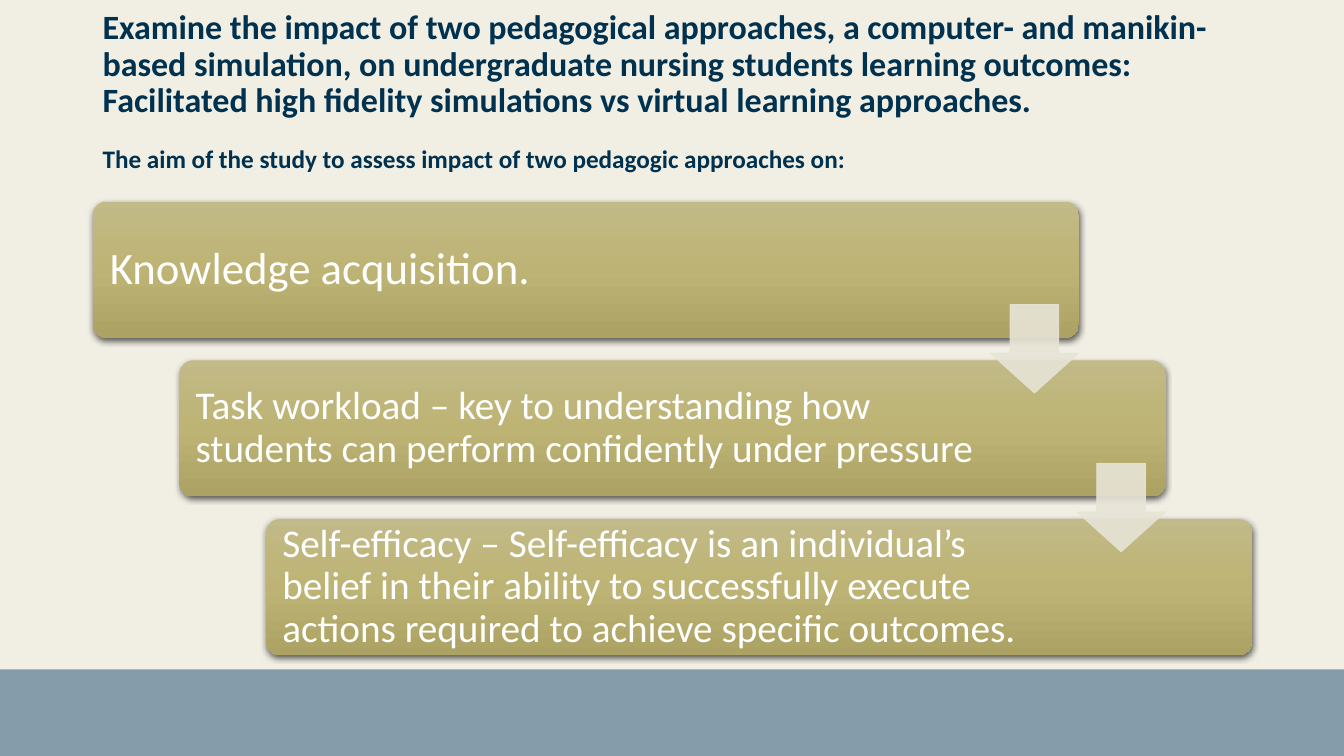
from copy import deepcopy

from lxml import etree
from pptx import Presentation
from pptx.dml.color import RGBColor
from pptx.enum.shapes import MSO_SHAPE
from pptx.enum.text import MSO_ANCHOR, PP_ALIGN
from pptx.oxml import parse_xml
from pptx.oxml.ns import nsdecls, qn
from pptx.util import Inches, Pt

RECTANGLE = MSO_SHAPE.RECTANGLE
ROUNDED = MSO_SHAPE.ROUNDED_RECTANGLE
DOWN_ARROW = MSO_SHAPE.DOWN_ARROW
TOP, MIDDLE = MSO_ANCHOR.TOP, MSO_ANCHOR.MIDDLE
LEFT = PP_ALIGN.LEFT

COLORS = {
    "background": "F1EFE4",
    "footer": "859DAA",
    "title": "00314F",
    "card_top": "C2BA87",
    "card_middle": "BDB374",
    "card_bottom": "ACA263",
    "arrow": "E7E4D6",
    "card_text": "FFFFFF",
    "shadow": "000000",
}
FONT = "Calibri"

TITLE = [
    ("Examine the impact of two pedagogical approaches, a computer- and manikin-based "
     "simulation, on undergraduate nursing students learning outcomes: Facilitated high "
     "fidelity simulations vs virtual learning approaches.", 24.3, 0),
    ("The aim of the study to assess impact of two pedagogic approaches on:", 18, 19),
]
OUTCOMES = [
    ("Knowledge acquisition.", 32, 8.32, 0.13),
    ("Task workload – key to understanding how students can perform confidently "
     "under pressure", 28, 7.96, 0.12),
    ("Self-efficacy – Self-efficacy is an individual’s belief in their ability to "
     "successfully execute actions required to achieve specific outcomes.", 28, 7.96, 0.12),
]
CARD_WIDTH, CARD_HEIGHT = 9.78, 1.35
ARROW_SIZE = 0.88


def color(name):
    return RGBColor.from_string(COLORS[name])


def add_box(slide, kind, left, top, width, height):
    shape = slide.shapes.add_shape(
        kind, Inches(left), Inches(top), Inches(width), Inches(height))
    shape.shadow.inherit = False
    shape.line.fill.background()
    return shape


def add_text(slide, left, top, width, height, paragraphs, color_name,
             anchor=MIDDLE, inset=0.1, bold=False):
    box = slide.shapes.add_textbox(
        Inches(left), Inches(top), Inches(width), Inches(height))
    frame = box.text_frame
    frame.word_wrap = True
    frame.vertical_anchor = anchor
    frame.margin_left = frame.margin_right = Inches(inset)
    frame.margin_top = frame.margin_bottom = Inches(inset)
    for index, (text, size, space_before) in enumerate(paragraphs):
        paragraph = frame.add_paragraph() if index else frame.paragraphs[0]
        paragraph.alignment = LEFT
        paragraph.line_spacing = 0.9
        if space_before:
            paragraph.space_before = Pt(space_before)
        run = paragraph.add_run()
        run.text = text
        run.font.name = FONT
        run.font.size = Pt(size)
        run.font.bold = bold
        run.font.color.rgb = color(color_name)


def fill_card(shape):
    fill = shape.fill
    fill.gradient()
    stop_list = shape.element.spPr.find(".//" + qn("a:gsLst"))
    stop_list.append(deepcopy(stop_list[0]))
    names = ("card_top", "card_middle", "card_bottom")
    for index, (stop, name) in enumerate(zip(fill.gradient_stops, names)):
        stop.position = index / 2
        stop.color.rgb = color(name)
    fill.gradient_angle = 270


def add_card_shadow(shape):
    effects = shape.element.spPr.find(qn("a:effectLst"))
    effects.append(parse_xml(
        f'<a:outerShdw {nsdecls("a")} blurRad="{Pt(4.5)}" dist="{Pt(1.5)}" '
        f'dir="5400000" rotWithShape="0"><a:srgbClr val="{COLORS["shadow"]}">'
        '<a:alpha val="63000"/></a:srgbClr></a:outerShdw>'))


def add_card(slide, left, top, outcome):
    text, size, text_width, inset = outcome
    card = add_box(slide, ROUNDED, left, top, CARD_WIDTH, CARD_HEIGHT)
    card.adjustments[0] = 0.1
    fill_card(card)
    add_card_shadow(card)
    add_text(slide, left + 0.04, top + 0.04, text_width, CARD_HEIGHT - 0.08,
             [(text, size, 0)], "card_text", inset=inset)


def add_arrow(slide, left, top):
    arrow = add_box(slide, DOWN_ARROW, left, top, ARROW_SIZE, ARROW_SIZE)
    arrow.adjustments[0] = 0.55
    arrow.adjustments[1] = 0.45
    arrow.fill.solid()
    arrow.fill.fore_color.rgb = color("arrow")
    arrow.line.color.rgb = color("arrow")
    arrow.line.width = Pt(0.5)
    for value in arrow.element.spPr.iter(qn("a:srgbClr")):
        etree.SubElement(value, qn("a:alpha")).set("val", "90000")


def add_staircase(slide, left, top, width, height):
    intervals = len(OUTCOMES) - 1
    step_x = (width - CARD_WIDTH) / intervals
    step_y = (height - CARD_HEIGHT) / intervals
    corners = [(left + index * step_x, top + index * step_y)
               for index in range(len(OUTCOMES))]
    for (card_left, card_top), outcome in zip(corners, OUTCOMES):
        add_card(slide, card_left, card_top, outcome)
    for card_left, card_top in corners[:-1]:
        add_arrow(slide, card_left + CARD_WIDTH - ARROW_SIZE, card_top + 1.02)


def add_title(slide, left, top, width, height):
    add_text(slide, left, top, width, height, TITLE, "title",
             anchor=TOP, bold=True)


def add_footer(slide, left, top, width, height):
    footer = add_box(slide, RECTANGLE, left, top, width, height)
    footer.fill.solid()
    footer.fill.fore_color.rgb = color("footer")


def main():
    presentation = Presentation()
    presentation.slide_width = Inches(13.33)
    presentation.slide_height = Inches(7.5)
    slide = presentation.slides.add_slide(presentation.slide_layouts[6])
    slide.background.fill.solid()
    slide.background.fill.fore_color.rgb = color("background")
    add_footer(slide, 0, 6.64, 13.33, 0.86)
    add_title(slide, 0.92, 0, 11.5, 1.85)
    add_staircase(slide, 0.92, 2, 11.5, 4.5)
    presentation.save("out.pptx")


if __name__ == "__main__":
    main()
